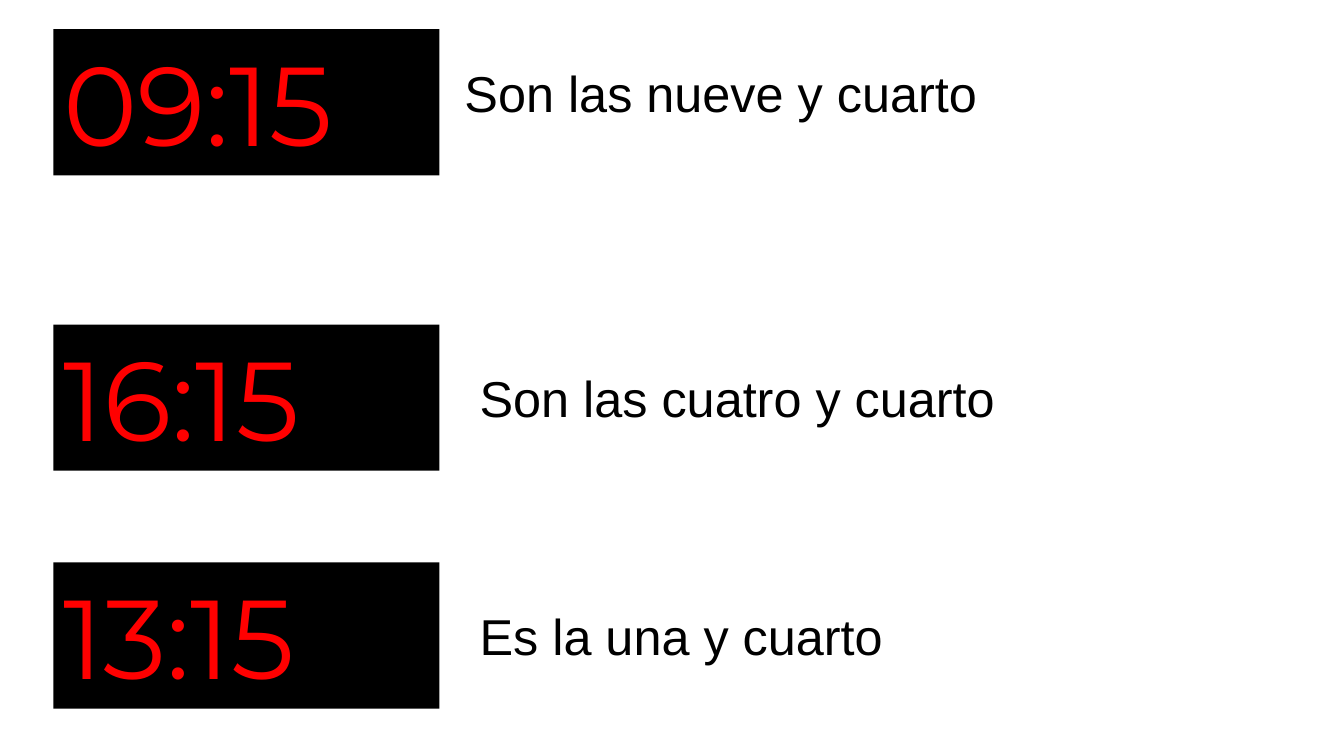
"""Build a slide of three digital clocks, each with its time in Spanish words."""
from pptx import Presentation
from pptx.dml.color import RGBColor
from pptx.enum.shapes import MSO_SHAPE as Shape
from pptx.enum.text import MSO_ANCHOR as Anchor, MSO_AUTO_SIZE as Fit, PP_ALIGN as Align
from pptx.util import Inches, Pt

COLORS = {"paper": "FFFFFF", "display": "000000", "digits": "FF0000", "words": "000000"}
DIGITS = {"name": "Montserrat", "size": Pt(80)}
WORDS = {"name": "Arial", "size": Pt(36)}
FRAME = {"word_wrap": True, "auto_size": Fit.SHAPE_TO_FIT_TEXT, "vertical_anchor": Anchor.TOP}

deck = Presentation()
deck.slide_height = Inches(7.5)
deck.slide_width = deck.slide_height * 16 // 9
page = deck.slides.add_slide(deck.slide_layouts[6])
page.background.fill.solid()
page.background.fill.fore_color.rgb = RGBColor.from_string(COLORS["paper"])

CLOCK_LEFT, CLOCK_WIDTH, CLOCK_HEIGHT = Inches(0.53), Inches(3.83), Inches(1.45)
WORDS_WIDTH, WORDS_HEIGHT = Inches(5.56), Inches(0.71)
WORDS_DROP = (CLOCK_HEIGHT - WORDS_HEIGHT) // 2


def write(box, text, font, color):
    for key, value in FRAME.items():
        setattr(box.text_frame, key, value)
    para = box.text_frame.paragraphs[0]
    para.alignment = Align.LEFT
    span = para.add_run()
    span.text = text
    for key, value in font.items():
        setattr(span.font, key, value)
    span.font.color.rgb = RGBColor.from_string(COLORS[color])


rows = [
    (0.29, "09:15", 4.51, -0.09, "Son las nueve y cuarto"),
    (3.22, "16:15", 4.66, 0, "Son las cuatro y cuarto"),
    (5.58, "13:15", 4.66, 0, "Es la una y cuarto"),
]
for top, time, words_left, words_shift, words in rows:
    clock = page.shapes.add_shape(
        Shape.RECTANGLE, CLOCK_LEFT, Inches(top), CLOCK_WIDTH, CLOCK_HEIGHT)
    clock.shadow.inherit = False
    clock.fill.solid()
    clock.fill.fore_color.rgb = RGBColor.from_string(COLORS["display"])
    clock.line.fill.background()
    write(clock, time, DIGITS, "digits")

    words_top = Inches(top + words_shift) + WORDS_DROP
    label = page.shapes.add_textbox(
        Inches(words_left), words_top, WORDS_WIDTH, WORDS_HEIGHT)
    write(label, words, WORDS, "words")

deck.save("out.pptx")
